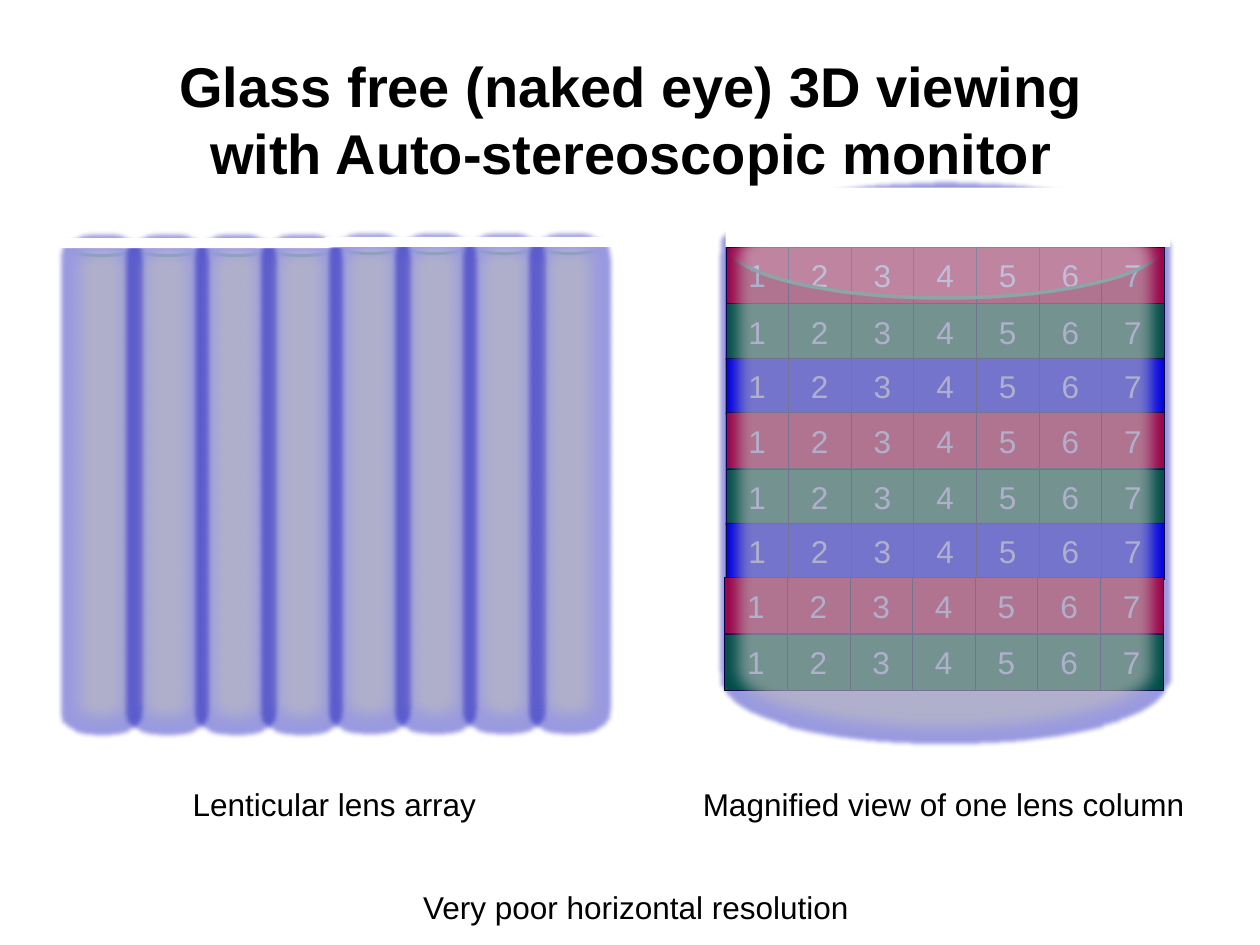
from lxml.etree import SubElement as Sub
from pptx import Presentation
from pptx.dml.color import RGBColor as Rgb
from pptx.enum.shapes import MSO_SHAPE as Kind
from pptx.enum.text import MSO_ANCHOR as Anchor, PP_ALIGN as Align
from pptx.oxml.ns import qn
from pptx.util import Inches, Pt

COLS, ROWS = 100, 75
WIDE, HIGH = Inches(10), Inches(7.5)


def tint(code):
    return Rgb.from_string(code)


def grid(box):
    x, y, w, h = box
    return [round(v) for v in (x * WIDE / COLS, y * HIGH / ROWS,
                               w * WIDE / COLS, h * HIGH / ROWS)]


def write(para, text, size, code, bold=False):
    run = para.add_run()
    run.text = text
    font = run.font
    font.name, font.size, font.bold = "Arial", Pt(size), bold
    font.color.rgb = tint(code)


def draw(slide, kind, box, fill, line=None, width=0):
    shape = slide.shapes.add_shape(kind, *grid(box))
    shape.fill.solid()
    shape.fill.fore_color.rgb = tint(fill)
    if line:
        shape.line.color.rgb = tint(line)
        shape.line.width = Pt(width)
    else:
        shape.line.fill.background()
    shape.shadow.inherit = False
    return shape


def fade(node, share):
    Sub(node, qn("a:alpha"), val=str(share * 1000))


def add_title(slide, box, lines):
    title = slide.shapes.title
    title.left, title.top, title.width, title.height = grid(box)
    frame = title.text_frame
    frame.word_wrap = False
    frame.vertical_anchor = Anchor.TOP
    for n, text in enumerate(lines):
        para = frame.add_paragraph() if n else frame.paragraphs[0]
        para.alignment = Align.CENTER
        write(para, text, 32, "000000", True)


def add_label(slide, box, text):
    frame = slide.shapes.add_textbox(*grid(box)).text_frame
    frame.word_wrap = False
    write(frame.paragraphs[0], text, 18, "000000")


def add_lens(slide, box):
    lens = draw(slide, Kind.CAN, box, "C0C0C0", "8AA6A8", 2)
    props = lens.fill._xPr
    fade(props.find(qn("a:solidFill"))[0], 61)
    list_ = props.find(qn("a:effectLst"))
    glow = Sub(list_, qn("a:glow"), rad=str(Pt(5)))
    fade(Sub(glow, qn("a:srgbClr"), val="0000B4"), 40)
    Sub(list_, qn("a:softEdge"), rad="112500")


def add_row(slide, box, fill, count):
    x, y, w, h = box
    step = w / count
    for n in range(count):
        cell = draw(slide, Kind.RECTANGLE, (x + n * step, y, step, h),
                    fill, "000000", 0.25)
        frame = cell.text_frame
        frame.vertical_anchor = Anchor.MIDDLE
        para = frame.paragraphs[0]
        para.alignment = Align.CENTER
        write(para, str(n + 1), 18, "FFFFFF")


def add_zoom(slide, box):
    x, y, w, h = box
    hues = ["FF0000", "008000", "0000FF"]
    tops = [0, 4.5, 8.8]
    cycle, head = 13.1, 4.7
    for n in range(8):
        turn, part = divmod(n, 3)
        left = x - 0.1 * (turn == 2)
        top = y + head + turn * cycle + tops[part]
        add_row(slide, (left, top, w, 4.5), hues[part], 7)
    add_lens(slide, box)
    draw(slide, Kind.RECTANGLE, (x, y, w + 0.5, head), "FFFFFF")


def add_array(slide, box):
    x, y, w, h = box
    lens, near, pair = 5.5, 5.2, 10.65
    for n in range(8):
        left = x + n // 2 * pair + n % 2 * near
        top = y - 0.1 * (n > 3)
        add_lens(slide, (left, top, lens, h))
        draw(slide, Kind.RECTANGLE, (left - 0.8, top, 9, 0.8), "FFFFFF")


def main():
    deck = Presentation()
    deck.slide_width, deck.slide_height = WIDE, HIGH
    slide = deck.slides.add_slide(deck.slide_layouts[5])
    add_title(slide, (13, 3.6, 74.2, 11.8),
              ["Glass free (naked eye) 3D viewing",
               "with Auto-stereoscopic monitor"])
    add_zoom(slide, (57.6, 14.9, 34.8, 43.7))
    add_array(slide, (5.3, 18.9, 42.6, 39))
    add_label(slide, (14.3, 61.8, 24.7, 4), "Lenticular lens array")
    add_label(slide, (54.8, 61.8, 40.6, 4),
              "Magnified view of one lens column")
    add_label(slide, (32.6, 70, 36.1, 4), "Very poor horizontal resolution")
    deck.save("out.pptx")


if __name__ == "__main__":
    main()
